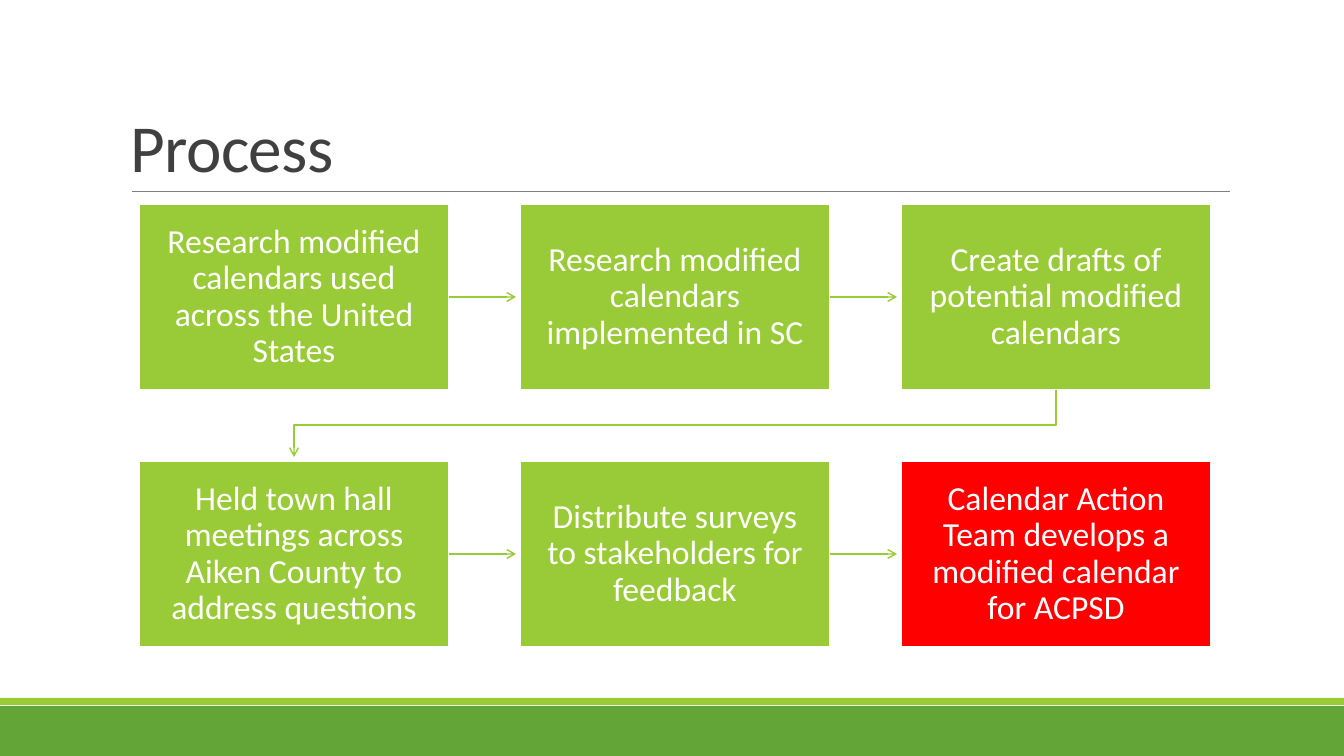
from dataclasses import dataclass

from lxml.etree import SubElement
from pptx import Presentation
from pptx.dml.color import RGBColor
from pptx.enum.shapes import MSO_CONNECTOR as Connector, MSO_SHAPE as Shape
from pptx.enum.text import MSO_ANCHOR as Anchor, PP_ALIGN as Align
from pptx.oxml.ns import qn
from pptx.util import Pt

EMU_PER_PX = 914400 / 100.8


@dataclass(frozen=True)
class Theme:
    font: str = "Calibri"
    title_size: int = 48
    step_size: int = 24
    title_color: str = "404040"
    step_text: str = "FFFFFF"
    border: str = "FFFFFF"
    lime: str = "99CB38"
    green: str = "63A537"
    red: str = "FF0000"
    rule: str = "808080"


THEME = Theme()

STEPS = [
    "Research modified calendars used across the United States",
    "Research modified calendars implemented in SC",
    "Create drafts of potential modified calendars",
    "Held town hall meetings across Aiken County to address questions",
    "Distribute surveys to stakeholders for feedback",
    "Calendar Action Team develops a modified calendar for ACPSD",
]
COLUMNS = 3
GRID_LEFT, GRID_TOP = 139, 204
STEP_WIDTH, STEP_HEIGHT = 310, 186
COLUMN_PITCH, ROW_PITCH = 381, 257
ARROW_GAP = 4
INSET = 19


def px(length):
    return round(length * EMU_PER_PX)


def color(value):
    return RGBColor.from_string(value)


def style_line(line, line_color, width):
    line.color.rgb = color(line_color)
    line.width = Pt(width)


def add_arrowhead(shape):
    SubElement(shape.line._get_or_add_ln(), qn("a:tailEnd"), type="arrow")


def write_text(text_frame, text, size, text_color, spacing):
    text_frame.text = text
    text_frame.word_wrap = True
    paragraph = text_frame.paragraphs[0]
    paragraph.line_spacing = spacing
    font = paragraph.runs[0].font
    font.name = THEME.font
    font.size = Pt(size)
    font.color.rgb = color(text_color)
    return paragraph


def add_rectangle(slide, left, top, width, height, fill):
    shape = slide.shapes.add_shape(
        Shape.RECTANGLE, px(left), px(top), px(width), px(height))
    shape.shadow.inherit = False
    shape.fill.solid()
    shape.fill.fore_color.rgb = color(fill)
    shape.line.fill.background()
    return shape


def add_title(slide, text):
    box = slide.shapes.add_textbox(px(121), px(31), px(1109), px(160))
    box.text_frame.vertical_anchor = Anchor.BOTTOM
    paragraph = write_text(
        box.text_frame, text, THEME.title_size, THEME.title_color, 0.85)
    paragraph.runs[0]._r.get_or_add_rPr().set("spc", "-50")


def add_line(slide, start, end, line_color, width):
    connector = slide.shapes.add_connector(
        Connector.STRAIGHT, *(px(value) for value in start + end))
    SubElement(connector._element.spPr, qn("a:effectLst"))
    style_line(connector.line, line_color, width)
    return connector


def step_position(index):
    row, column = divmod(index, COLUMNS)
    return GRID_LEFT + column * COLUMN_PITCH, GRID_TOP + row * ROW_PITCH


def add_step(slide, index, text):
    fill = THEME.red if index == len(STEPS) - 1 else THEME.lime
    shape = add_rectangle(
        slide, *step_position(index), STEP_WIDTH, STEP_HEIGHT, fill)
    style_line(shape.line, THEME.border, 1.25)
    frame = shape.text_frame
    frame.margin_left = frame.margin_right = px(INSET)
    frame.margin_top = frame.margin_bottom = px(INSET)
    frame.vertical_anchor = Anchor.MIDDLE
    paragraph = write_text(frame, text, THEME.step_size, THEME.step_text, 0.9)
    paragraph.alignment = Align.CENTER
    return shape


def add_step_arrow(slide, index, step):
    left, top = step_position(index)
    middle = top + STEP_HEIGHT // 2
    start = (left + STEP_WIDTH, middle)
    end = (left + COLUMN_PITCH - ARROW_GAP, middle)
    arrow = add_line(slide, start, end, THEME.lime, 1)
    arrow.begin_connect(step, 3)
    add_arrowhead(arrow)


def add_row_arrow(slide, index):
    left, top = step_position(index)
    next_left, next_top = step_position(index + 1)
    start_x = left + STEP_WIDTH // 2
    end_x = next_left + STEP_WIDTH // 2
    bottom = top + STEP_HEIGHT
    turn = (bottom + next_top) // 2
    builder = slide.shapes.build_freeform(start_x, bottom, scale=EMU_PER_PX)
    builder.add_line_segments(
        [(start_x, turn), (end_x, turn), (end_x, next_top - ARROW_GAP)],
        close=False)
    arrow = builder.convert_to_shape()
    arrow.shadow.inherit = False
    arrow.fill.background()
    style_line(arrow.line, THEME.lime, 1)
    add_arrowhead(arrow)


def add_process(slide):
    steps = [add_step(slide, index, text) for index, text in enumerate(STEPS)]
    for index, step in enumerate(steps[:-1]):
        if (index + 1) % COLUMNS:
            add_step_arrow(slide, index, step)
        else:
            add_row_arrow(slide, index)


def main():
    presentation = Presentation()
    presentation.slide_width = px(1344)
    presentation.slide_height = px(756)
    slide = presentation.slides.add_slide(presentation.slide_layouts[6])
    add_rectangle(slide, 0, 706, 1344, 50, THEME.green)
    add_rectangle(slide, 0, 698, 1344, 7, THEME.lime)
    add_line(slide, (132, 191), (1230, 191), THEME.rule, 0.5)
    add_title(slide, "Process")
    add_process(slide)
    presentation.save("out.pptx")


if __name__ == "__main__":
    main()
